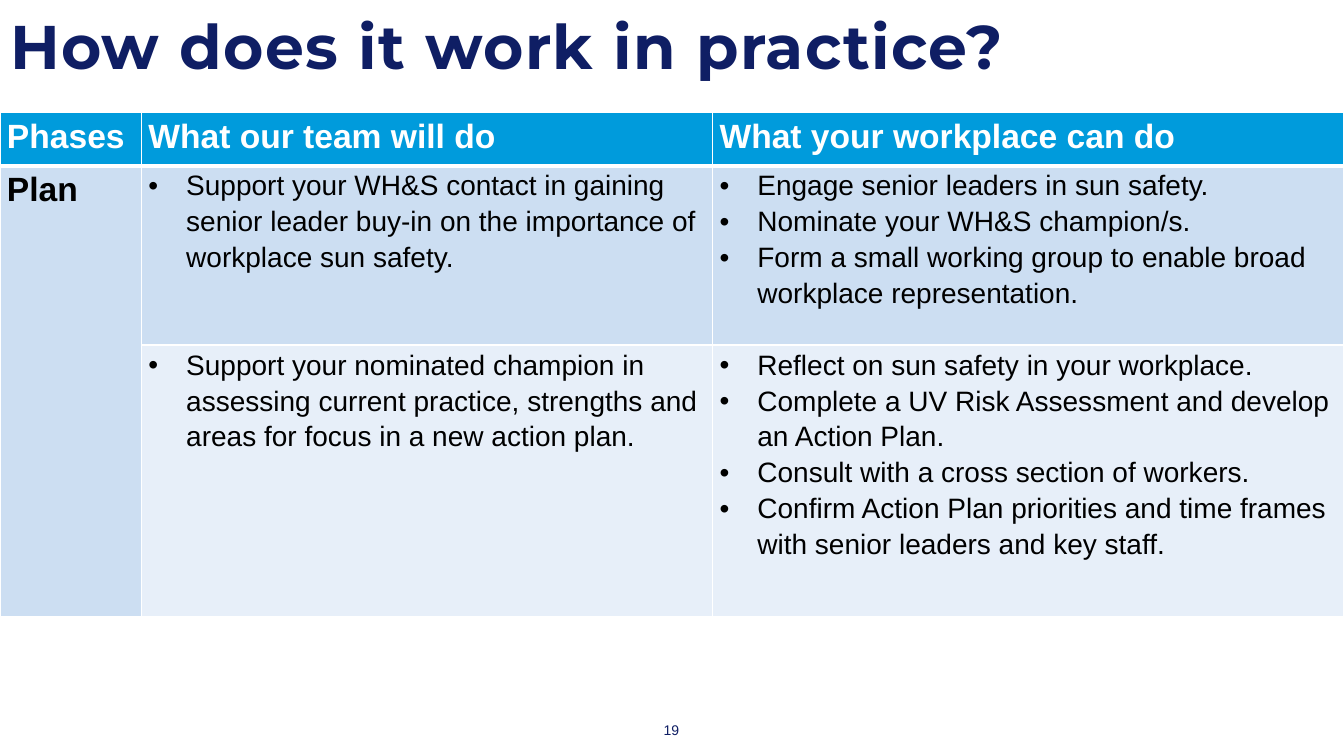
from lxml import etree
from pptx import Presentation
from pptx.dml.color import RGBColor
from pptx.enum import text
from pptx.oxml import ns
from pptx.util import Pt

NAVY = RGBColor(0x0F, 0x1E, 0x64)
BLUE = RGBColor(0x00, 0x9B, 0xDC)
PALE = RGBColor(0xCC, 0xDE, 0xF2)
LIGHT = RGBColor(0xE7, 0xEF, 0xF9)
WHITE = RGBColor(0xFF, 0xFF, 0xFF)
BLACK = RGBColor(0, 0, 0)

TITLE = "How does it work in practice?"
PAGE = "19"
HEADS = ["Phases", "What our team will do", "What your workplace can do"]
PHASE = "Plan"
STEPS = [
    (["Support your WH&S contact in gaining senior leader buy-in on the "
      "importance of workplace sun safety."],
     ["Engage senior leaders in sun safety.",
      "Nominate your WH&S champion/s.",
      "Form a small working group to enable broad workplace representation."]),
    (["Support your nominated champion in assessing current practice, "
      "strengths and areas for focus in a new action plan."],
     ["Reflect on sun safety in your workplace.",
      "Complete a UV Risk Assessment and develop an Action Plan.",
      "Consult with a cross section of workers.",
      "Confirm Action Plan priorities and time frames with senior leaders "
      "and key staff."]),
]
WIDTHS = [101, 408, 451]
HEIGHTS = [38, 128, 194]
INDENT = 27


def style(para, font, size, color, bold=False):
    for run in para.runs:
        run.font.name = font
        run.font.size = Pt(size)
        run.font.bold = bold
        run.font.color.rgb = color


def bullet(para):
    props = para._p.get_or_add_pPr()
    props.set("marL", str(Pt(INDENT)))
    props.set("indent", str(-Pt(INDENT)))
    etree.SubElement(props, ns.qn("a:buFont"), typeface="Arial")
    etree.SubElement(props, ns.qn("a:buChar"), char="•")


def border(cell, side, width):
    line = etree.SubElement(cell._tc.get_or_add_tcPr(), ns.qn("a:ln" + side),
                            w=str(Pt(width)))
    fill = etree.SubElement(line, ns.qn("a:solidFill"))
    etree.SubElement(fill, ns.qn("a:srgbClr"), val=str(WHITE))


def dress(cell, row, fill):
    """Give a cell its margins, white borders and fill."""
    cell.margin_left = cell.margin_right = Pt(5)
    cell.margin_top = cell.margin_bottom = 0
    for side in "LRTB":
        thick = (row, side) in [(0, "B"), (1, "T")]
        border(cell, side, 3 if thick else 1)
    cell.fill.solid()
    cell.fill.fore_color.rgb = fill


def write(cell, lines, size, color, bold=False, dots=False):
    frame = cell.text_frame
    frame.text = "\n".join(lines)
    for para in frame.paragraphs:
        if dots:
            bullet(para)
        para.line_spacing = 1.15
        style(para, "Arial", size, color, bold)


deck = Presentation()
deck.slide_width, deck.slide_height = Pt(960), Pt(540)
slide = deck.slides.add_slide(deck.slide_layouts[5])

title = slide.shapes.title
title.left, title.top, title.width, title.height = Pt(0), Pt(9.5), Pt(832), Pt(55.5)
frame = title.text_frame
frame.text = TITLE
frame.auto_size = text.MSO_AUTO_SIZE.NONE
frame.vertical_anchor = text.MSO_ANCHOR.MIDDLE
para = frame.paragraphs[0]
para.alignment = text.PP_ALIGN.LEFT
para.line_spacing = 0.8
style(para, "Montserrat", 44, NAVY, True)
para.runs[0]._r.get_or_add_rPr().set("spc", "100")

grid = slide.shapes.add_table(len(HEIGHTS), len(WIDTHS), Pt(0), Pt(80.5),
                              Pt(sum(WIDTHS)), Pt(sum(HEIGHTS))).table
for col, width in zip(grid.columns, WIDTHS):
    col.width = Pt(width)
for row, height in zip(grid.rows, HEIGHTS):
    row.height = Pt(height)
for r, fill in enumerate([BLUE, PALE, LIGHT]):
    for c in range(len(WIDTHS)):
        dress(grid.cell(r, c), r, PALE if r and c == 0 else fill)

for c, head in enumerate(HEADS):
    write(grid.cell(0, c), [head], 24, WHITE, bold=True)
grid.cell(1, 0).merge(grid.cell(2, 0))
write(grid.cell(1, 0), [PHASE], 24, BLACK, bold=True)
for r, step in enumerate(STEPS, 1):
    for c, lines in enumerate(step, 1):
        write(grid.cell(r, c), lines, 20, BLACK, dots=True)

page = slide.shapes.add_textbox(Pt(448.5), Pt(510.5), Pt(62), Pt(21.5)).text_frame
page.word_wrap = True
page.vertical_anchor = text.MSO_ANCHOR.MIDDLE
page.text = PAGE
page.paragraphs[0].alignment = text.PP_ALIGN.CENTER
style(page.paragraphs[0], "Arial", 10, NAVY)

deck.save("out.pptx")
